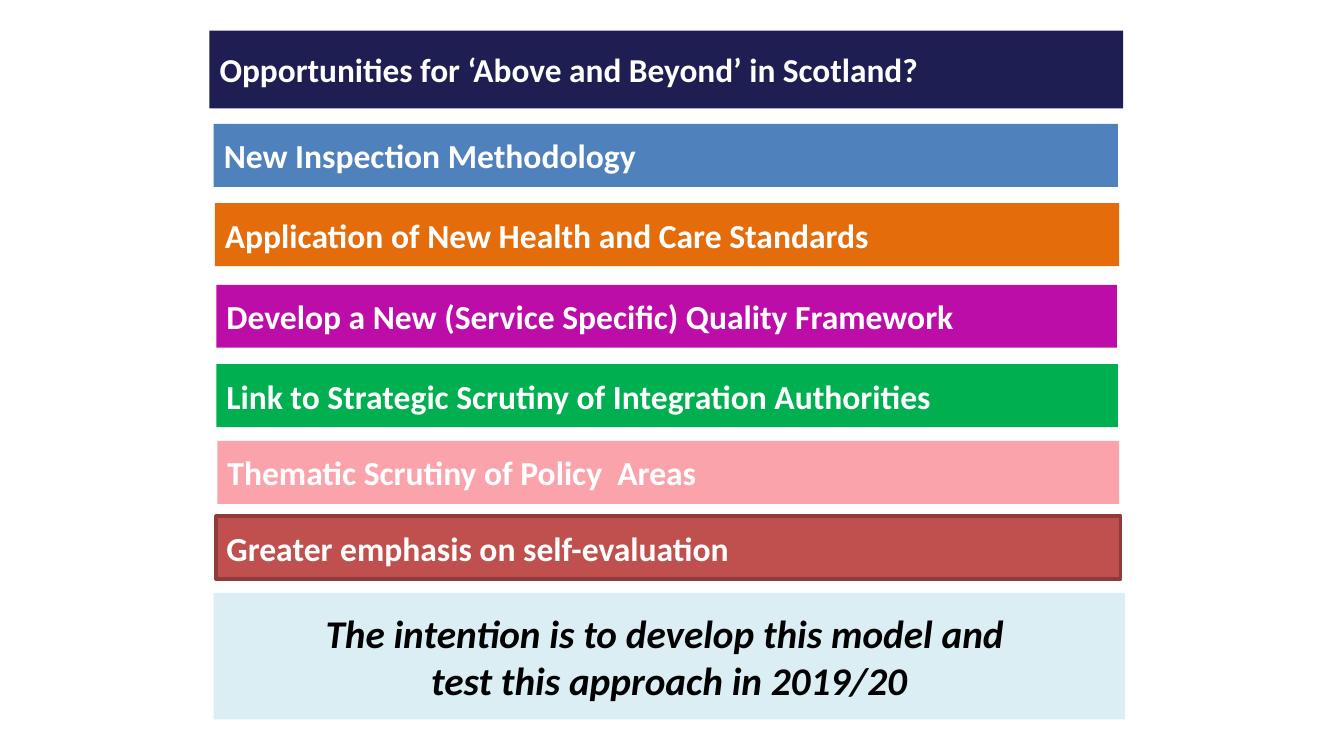
from pptx import Presentation
from pptx.dml.color import RGBColor
from pptx.enum import shapes, text
from pptx.util import Cm, Pt

NAVY = RGBColor(0x1E, 0x1E, 0x52)
BLUE = RGBColor(0x4F, 0x81, 0xBD)
ORANGE = RGBColor(0xE4, 0x6C, 0x0A)
MAGENTA = RGBColor(0xBD, 0x0D, 0xA8)
GREEN = RGBColor(0x00, 0xB0, 0x50)
PINK = RGBColor(0xFB, 0xA3, 0xAB)
RED = RGBColor(0xC0, 0x50, 0x4D)
DARK_RED = RGBColor(0x8E, 0x3B, 0x39)
PALE_BLUE = RGBColor(0xDB, 0xEE, 0xF4)
WHITE = RGBColor(0xFF, 0xFF, 0xFF)
BLACK = RGBColor(0x00, 0x00, 0x00)

presentation = Presentation()
presentation.slide_width = Cm(25.4)
presentation.slide_height = Cm(14.28)
slide = presentation.slides.add_slide(presentation.slide_layouts[6])


def add_bar(left, top, width, height, fill, lines, size=18, color=WHITE,
            alignment=text.PP_ALIGN.LEFT, italic=None):
    shape = slide.shapes.add_shape(
        shapes.MSO_SHAPE.RECTANGLE, Cm(left), Cm(top), Cm(width), Cm(height))
    shape.shadow.inherit = False
    shape.fill.solid()
    shape.fill.fore_color.rgb = fill
    shape.line.fill.background()
    frame = shape.text_frame
    frame.word_wrap = True
    frame.vertical_anchor = text.MSO_ANCHOR.MIDDLE
    frame.margin_left = frame.margin_right = Cm(0.19)
    frame.margin_top = frame.margin_bottom = Cm(0.1)
    frame.text = "\n".join(lines)
    for paragraph in frame.paragraphs:
        paragraph.alignment = alignment
        paragraph.font.name = "Calibri"
        paragraph.font.size = Pt(size)
        paragraph.font.bold = True
        paragraph.font.italic = italic
        paragraph.font.color.rgb = color
    return shape


add_bar(3.96, 0.58, 17.27, 1.47, NAVY,
        ["Opportunities for ‘Above and Beyond’ in Scotland?"], size=17.9)

add_bar(4.04, 11.2, 17.22, 2.39, PALE_BLUE,
        ["The intention is to develop this model and ", "test this approach in 2019/20"],
        size=21, color=BLACK, alignment=text.PP_ALIGN.CENTER, italic=True)

opportunities = [
    (4.04, 2.34, 17.09, BLUE, "New Inspection Methodology"),
    (4.06, 3.84, 17.09, ORANGE, "Application of New Health and Care Standards"),
    (4.09, 5.38, 17.02, MAGENTA, "Develop a New (Service Specific) Quality Framework"),
    (4.09, 6.88, 17.04, GREEN, "Link to Strategic Scrutiny of Integration Authorities"),
    (4.11, 8.33, 17.04, PINK, "Thematic Scrutiny of Policy  Areas"),
    (4.09, 9.75, 17.09, RED, "Greater emphasis on self-evaluation"),
]
for left, top, width, fill, label in opportunities:
    bar = add_bar(left, top, width, 1.19, fill, [label])

bar.line.color.rgb = DARK_RED
bar.line.width = Pt(2)

presentation.save("out.pptx")
